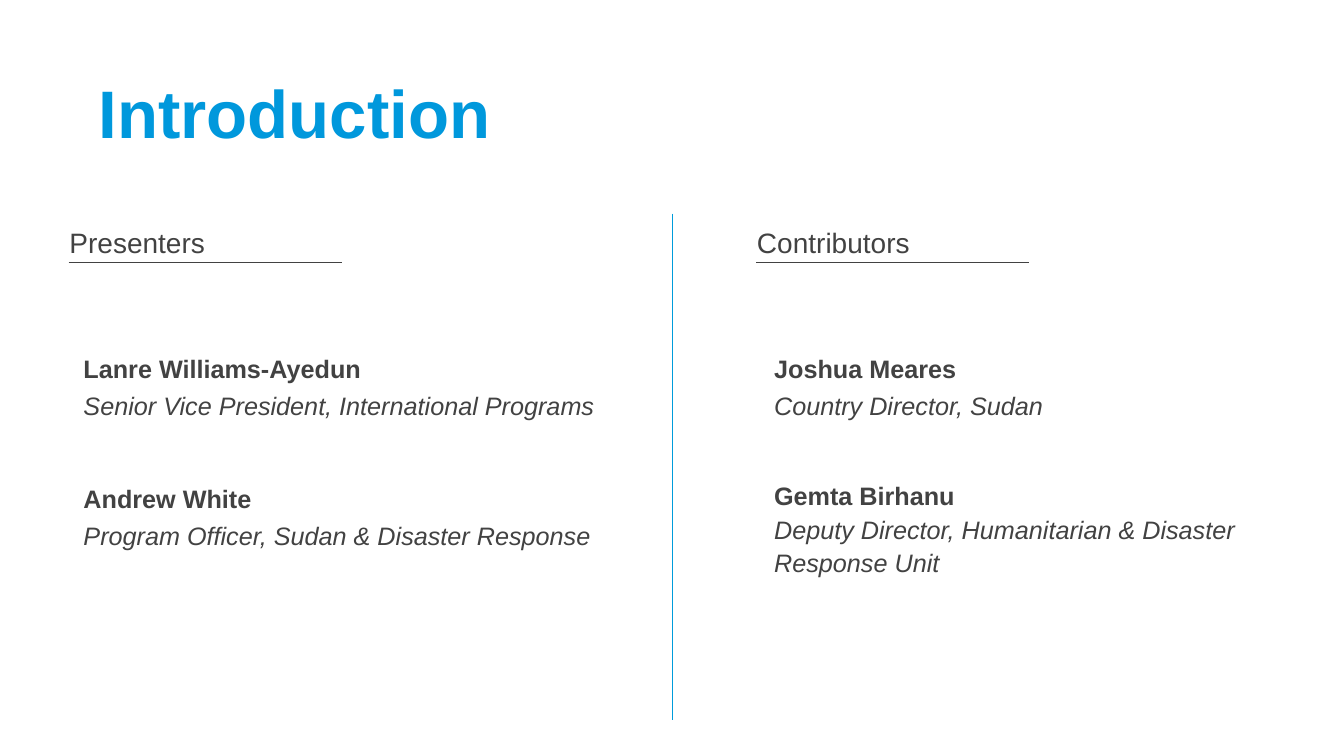
from dataclasses import dataclass

from lxml import etree
from pptx import Presentation
from pptx.dml.color import RGBColor
from pptx.enum.shapes import MSO_CONNECTOR
from pptx.enum.text import MSO_ANCHOR
from pptx.oxml.ns import qn
from pptx.util import Inches, Pt

STRAIGHT = MSO_CONNECTOR.STRAIGHT
TOP = MSO_ANCHOR.TOP
BOTTOM = MSO_ANCHOR.BOTTOM


@dataclass(frozen=True)
class Theme:
    font: str = "Arial"
    title_color: str = "0098DC"
    divider_color: str = "009CDB"
    text_color: str = "424242"
    title_size: int = 48
    heading_size: int = 20
    body_size: int = 18
    line_width: float = 0.5


class SlideBuilder:
    def __init__(self, slide, theme):
        self.slide = slide
        self.theme = theme

    def paragraph(self, left, top, width, height, size, color, anchor=TOP, spacing=1.0):
        box = self.slide.shapes.add_textbox(
            Inches(left), Inches(top), Inches(width), Inches(height)
        )
        frame = box.text_frame
        frame.word_wrap = True
        frame.vertical_anchor = anchor
        paragraph = frame.paragraphs[0]
        paragraph.line_spacing = spacing
        paragraph.font.name = self.theme.font
        paragraph.font.size = Pt(size)
        paragraph.font.color.rgb = RGBColor.from_string(color)
        return paragraph

    def title(self, text):
        title = self.paragraph(
            0.88, 0.45, 10.81, 1.11, self.theme.title_size, self.theme.title_color, BOTTOM
        )
        title.font.bold = True
        title.add_run().text = text

    def heading(self, left, text):
        heading = self.paragraph(
            left, 2.12, 5.43, 0.54, self.theme.heading_size, self.theme.text_color, spacing=1.2
        )
        heading.add_run().text = text
        rule_left = left + 0.09
        self.line(rule_left, 2.6, rule_left + 2.71, 2.6, self.theme.text_color)

    def person(self, left, top, name, role, spacing):
        person = self.paragraph(
            left, top, 5.43, 1.11, self.theme.body_size, self.theme.text_color, spacing=spacing
        )
        name_run = person.add_run()
        name_run.text = name
        name_run.font.bold = True
        person.add_line_break()
        role_run = person.add_run()
        role_run.text = role
        role_run.font.italic = True

    def line(self, x1, y1, x2, y2, color):
        rule = self.slide.shapes.add_connector(
            STRAIGHT, Inches(x1), Inches(y1), Inches(x2), Inches(y2)
        )
        rule.line.color.rgb = RGBColor.from_string(color)
        rule.line.width = Pt(self.theme.line_width)
        etree.SubElement(rule._element.spPr, qn("a:effectLst"))


COLUMNS = [
    ("Presenters", 0.59, 0.73, [
        ("Lanre Williams-Ayedun", "Senior Vice President, International Programs", 1.2),
        ("Andrew White", "Program Officer, Sudan & Disaster Response", 1.2),
    ]),
    ("Contributors", 7.41, 7.58, [
        ("Joshua Meares", "Country Director, Sudan", 1.2),
        ("Gemta Birhanu", "Deputy Director, Humanitarian & Disaster Response Unit", 1.1),
    ]),
]
FIRST_PERSON_TOP = 3.4
PERSON_STEP = 1.29


def main():
    presentation = Presentation()
    presentation.slide_width = Inches(13.33)
    presentation.slide_height = Inches(7.5)
    slide = presentation.slides.add_slide(presentation.slide_layouts[6])
    theme = Theme()
    builder = SlideBuilder(slide, theme)

    builder.title("Introduction")
    builder.line(6.67, 2.12, 6.67, 7.14, theme.divider_color)
    for heading, heading_left, people_left, people in COLUMNS:
        builder.heading(heading_left, heading)
        for row, (name, role, spacing) in enumerate(people):
            top = FIRST_PERSON_TOP + row * PERSON_STEP
            builder.person(people_left, top, name, role, spacing)

    presentation.save("out.pptx")


if __name__ == "__main__":
    main()
